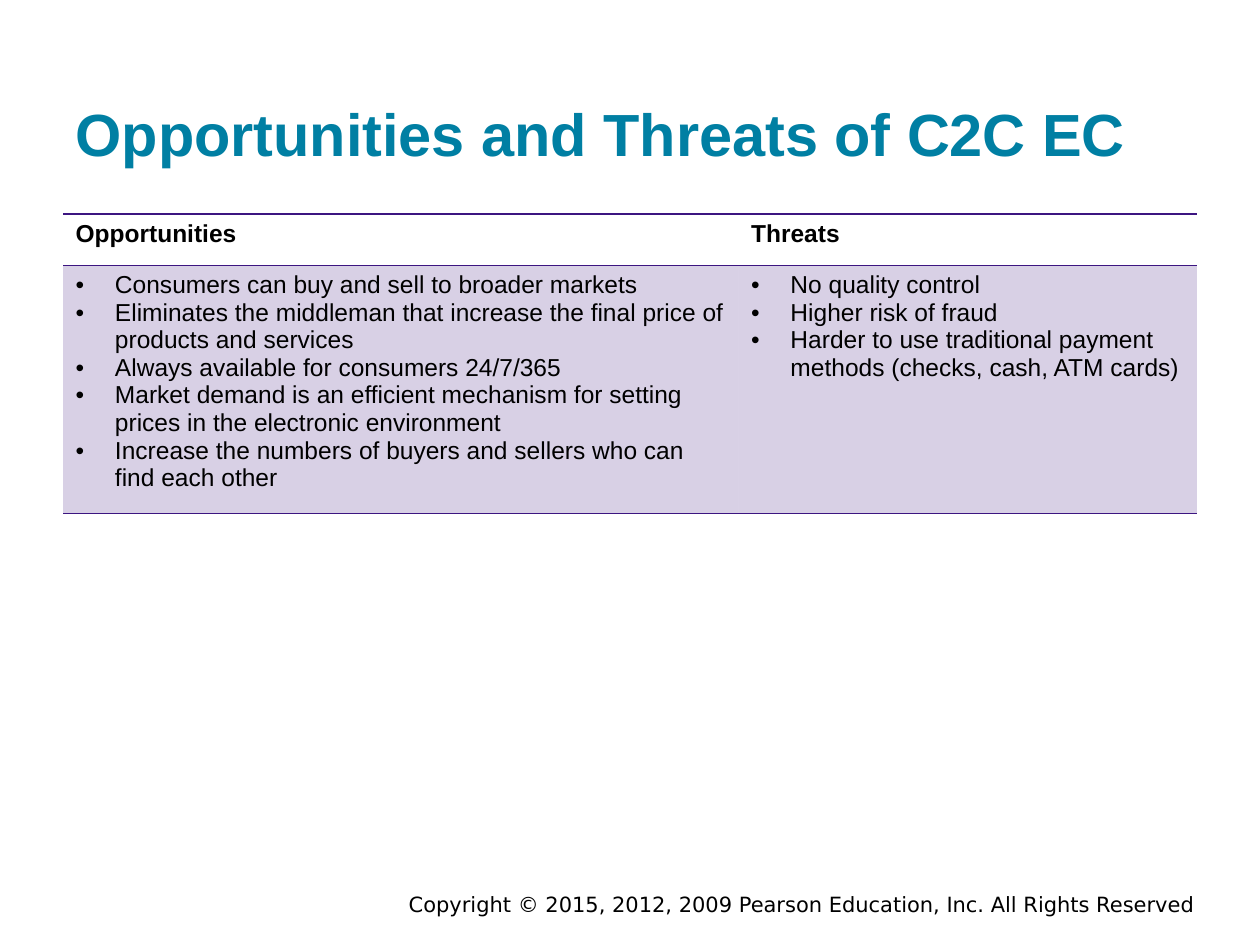
from dataclasses import dataclass

from lxml.etree import SubElement
from pptx import Presentation
from pptx.dml.color import RGBColor
from pptx.enum.text import MSO_ANCHOR, MSO_AUTO_SIZE, PP_ALIGN
from pptx.oxml import parse_xml
from pptx.oxml.ns import nsdecls, qn
from pptx.util import Pt


@dataclass(frozen=True)
class Theme:
    font: str = "Arial"
    small_font: str = "DejaVu Sans"
    teal: str = "007FA3"
    purple: str = "3C1581"
    black: str = "000000"
    tint: int = 20
    title: float = 34
    text: float = 14
    small: float = 12
    rule: float = 1
    indent: float = 22.5


THEME = Theme()

COLUMNS = {
    "Opportunities": [
        "Consumers can buy and sell to broader markets",
        "Eliminates the middleman that increase the final price of products and services",
        "Always available for consumers 24/7/365",
        "Market demand is an efficient mechanism for setting prices in the electronic environment",
        "Increase the numbers of buyers and sellers who can find each other",
    ],
    "Threats": [
        "No quality control",
        "Higher risk of fraud",
        "Harder to use traditional payment methods (checks, cash, ATM cards)",
    ],
}


def style(para, size, color=THEME.black, bold=False, font=THEME.font):
    for run in para.runs:
        run.font.name = font
        run.font.size = Pt(size)
        run.font.bold = bold
        run.font.color.rgb = RGBColor.from_string(color)


def add_title(slide, box, text):
    title = slide.shapes.title
    title.left, title.top, title.width, title.height = map(Pt, box)
    frame = title.text_frame
    frame.text = text
    frame.auto_size = MSO_AUTO_SIZE.NONE
    frame.vertical_anchor = MSO_ANCHOR.BOTTOM
    frame.margin_left = frame.margin_right = Pt(7.2)
    frame.margin_top = frame.margin_bottom = Pt(7.2)
    para = frame.paragraphs[0]
    para.alignment = PP_ALIGN.LEFT
    style(para, THEME.title, THEME.teal, bold=True)


def add_bullet(para):
    props = para._p.get_or_add_pPr()
    props.set("marL", str(Pt(THEME.indent)))
    props.set("indent", str(-Pt(THEME.indent)))
    SubElement(props, qn("a:buFont")).set("typeface", THEME.font)
    SubElement(props, qn("a:buChar")).set("char", "•")


def rule_cell(cell, sides):
    """Draw a thin line on each named side (T before B)."""
    props = cell._tc.get_or_add_tcPr()
    for place, side in enumerate(sides):
        line = parse_xml(
            f'<a:ln{side} {nsdecls("a")} w="{Pt(THEME.rule)}"><a:solidFill>'
            f'<a:srgbClr val="{THEME.purple}"/></a:solidFill></a:ln{side}>'
        )
        props.insert(place, line)


def tint_cell(cell):
    cell.fill.solid()
    cell.fill.fore_color.rgb = RGBColor.from_string(THEME.purple)
    color = cell._tc.tcPr.find(qn("a:solidFill")).find(qn("a:srgbClr"))
    SubElement(color, qn("a:alpha")).set("val", str(THEME.tint * 1000))


def add_lists(slide, box, widths, heights, columns):
    """Table with one heading and one bullet list per column."""
    table = slide.shapes.add_table(2, len(columns), *map(Pt, box)).table
    table.first_row = table.horz_banding = False
    plain = "{2D5ABB26-0587-4C30-8999-92F81FD0307C}"
    table._tbl.tblPr.find(qn("a:tableStyleId")).text = plain
    for row, height in zip(table.rows, heights):
        row.height = Pt(height)
    for col, (head, items) in enumerate(columns.items()):
        table.columns[col].width = Pt(widths[col])
        top, body = table.cell(0, col), table.cell(1, col)
        top.text = head
        style(top.text_frame.paragraphs[0], THEME.text, bold=True)
        top.fill.background()
        rule_cell(top, "TB")
        body.text = "\n".join(items)
        for para in body.text_frame.paragraphs:
            add_bullet(para)
            style(para, THEME.text)
        tint_cell(body)
        rule_cell(body, "TB")


def add_footer(slide, box, text):
    frame = slide.shapes.add_textbox(*map(Pt, box)).text_frame
    frame.word_wrap = True
    frame.text = text
    para = frame.paragraphs[0]
    para.alignment = PP_ALIGN.RIGHT
    style(para, THEME.small, font=THEME.small_font)


def main():
    deck = Presentation()
    deck.slide_width, deck.slide_height = Pt(720), Pt(540)
    slide = deck.slides.add_slide(deck.slide_layouts[5])
    add_footer(slide, (126, 506, 564, 16),
               "Copyright © 2015, 2012, 2009 Pearson Education, Inc. All Rights Reserved")
    add_title(slide, (36, 17.5, 648, 86), "Opportunities and Threats of C2C EC")
    add_lists(slide, (36, 122.4, 648, 162.5), (386, 262), (29.2, 133.3), COLUMNS)
    deck.save("out.pptx")


if __name__ == "__main__":
    main()
